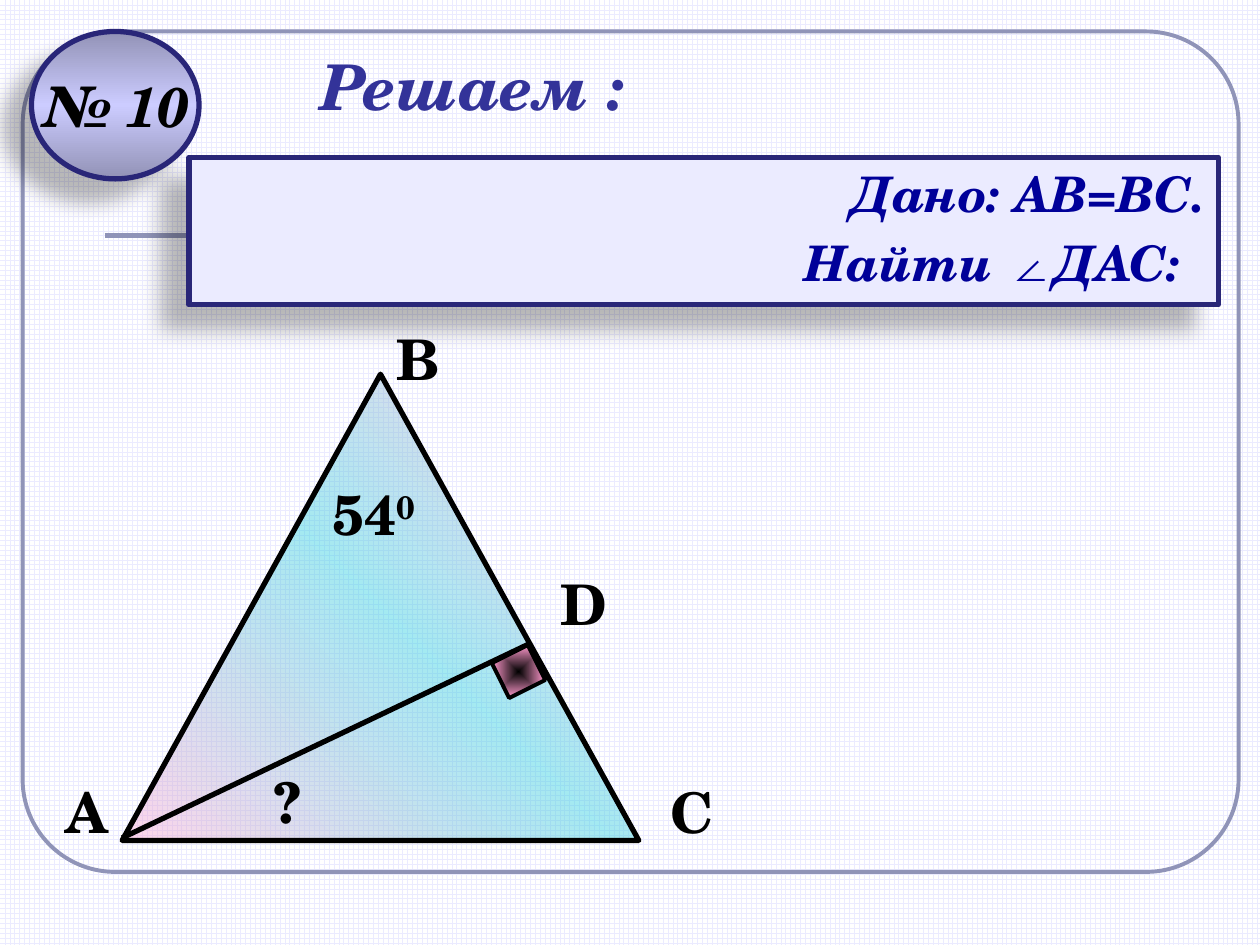
"""Build a geometry task slide with a triangle and its altitude."""
from pptx import Presentation, oxml, util as u
from pptx.dml import color
from pptx.enum import dml as looks, shapes, text
from pptx.oxml import ns

FONT = "TeX Gyre Schola"
INK, EDGE, PALE, RIM = "000000", "292678", "EBEBFF", "9094B8"
KIND, ALIGN = shapes.MSO_SHAPE, text.PP_ALIGN


def rgb(code):
    return color.RGBColor.from_string(code)


class Board:
    def __init__(self, slide):
        self.slide = slide

    def back(self, fore, base):
        fill = self.slide.background.fill
        fill.patterned()
        fill.pattern = looks.MSO_PATTERN.LARGE_GRID
        fill.fore_color.rgb, fill.back_color.rgb = rgb(fore), rgb(base)

    def stroke(self, item, code, width):
        item.line.color.rgb = rgb(code)
        item.line.width = u.Pt(width)

    def shape(self, kind, box, line, width, fill=None):
        item = self.slide.shapes.add_shape(kind, *map(u.Inches, box))
        item.shadow.inherit = False
        self.stroke(item, line, width)
        if fill:
            item.fill.solid()
            item.fill.fore_color.rgb = rgb(fill)
        else:
            item.fill.background()
        return item

    def blend(self, item, stops, angle=None):
        marks = "".join(
            f'<a:gs pos="{pos * 1000}"><a:srgbClr val="{code}">'
            f'<a:alpha val="{alpha * 1000}"/></a:srgbClr></a:gs>'
            for pos, code, alpha in stops)
        if angle is None:
            way = ('<a:path path="rect"><a:fillToRect l="50000" t="50000" '
                   'r="50000" b="50000"/></a:path>')
        else:
            way = f'<a:lin ang="{angle * 60000}" scaled="0"/>'
        new = oxml.parse_xml(
            f'<a:gradFill {ns.nsdecls("a")} rotWithShape="1">'
            f'<a:gsLst>{marks}</a:gsLst>{way}</a:gradFill>')
        item.fill.gradient()
        old = item._element.spPr.find(ns.qn("a:gradFill"))
        old.getparent().replace(old, new)

    def shade(self, item):
        item._element.spPr.find(ns.qn("a:effectLst")).append(oxml.parse_xml(
            f'<a:outerShdw {ns.nsdecls("a")} blurRad="{u.Pt(11.8)}" '
            f'dist="{u.Pt(19.7)}" dir="{141 * 60000}" algn="ctr" '
            'rotWithShape="0"><a:srgbClr val="000000">'
            '<a:alpha val="28000"/></a:srgbClr></a:outerShdw>'))

    def line(self, start, end, code, width):
        item = self.slide.shapes.add_connector(
            shapes.MSO_CONNECTOR.STRAIGHT, *map(u.Inches, start + end))
        self.stroke(item, code, width)
        item._element.spPr.append(
            oxml.parse_xml(f'<a:effectLst {ns.nsdecls("a")}/>'))

    def style(self, run, size, code, slant=False):
        font = run.font
        font.name, font.size = FONT, u.Pt(size)
        font.bold, font.italic = True, slant
        font.color.rgb = rgb(code)

    def words(self, item, words, size, code, align, slant=True, wrap=False):
        frame = item.text_frame
        frame.text = words
        frame.word_wrap = wrap
        for para in frame.paragraphs:
            para.alignment = align
            for run in para.runs:
                self.style(run, size, code, slant)
        return frame

    def label(self, box, words, size=32, code=INK, align=ALIGN.LEFT,
              slant=False, wrap=False):
        item = self.slide.shapes.add_textbox(*map(u.Inches, box))
        return self.words(item, words, size, code, align, slant, wrap)


def main():
    deck = Presentation()
    deck.slide_width, deck.slide_height = u.Inches(10), u.Inches(7.5)
    board = Board(deck.slides.add_slide(deck.slide_layouts[6]))
    board.back(PALE, "FFFFFF")

    frame = board.shape(KIND.ROUNDED_RECTANGLE, (0.18, 0.25, 9.65, 6.67), RIM, 2.25)
    frame.adjustments[0] = 0.11
    board.line((0.83, 1.87), (9.25, 1.87), RIM, 3)

    body = board.shape(KIND.ISOSCELES_TRIANGLE, (0.97, 2.97, 4.1, 3.7), INK, 3)
    board.blend(body, [(0, "FF99CC", 40), (50, "27CCDD", 41), (100, "FF99CC", 40)], 315)
    board.line((0.97, 6.65), (4.2, 5.11), INK, 3)
    right = board.shape(KIND.RECTANGLE, (3.96, 5.17, 0.31, 0.32), INK, 2.25)
    right.rotation = 63.5
    board.blend(right, [(0, INK, 100), (100, "FF99CC", 100)])

    for name, left, top in (("В", 3.05, 2.53), ("А", 0.42, 6.12),
                            ("С", 5.22, 6.12), ("D", 4.35, 4.47)):
        board.label((left, top, 0.54, 0.63), name)
    angle = board.label((2.54, 3.76, 1.34, 0.63), "54", wrap=True)
    power = angle.paragraphs[0].add_run()
    power.text = "0"
    board.style(power, 32, INK)
    power.font._element.set("baseline", "30000")
    board.label((2.07, 6.04, 0.47, 0.63), "?", wrap=True)

    task = board.shape(KIND.RECTANGLE, (1.5, 1.25, 8.17, 1.17), EDGE, 3, PALE)
    board.shade(task)
    given = board.words(task, "Дано: АВ=ВС.\nНайти ∠ДАС:", 28, "000099",
                        ALIGN.RIGHT, wrap=True)
    given.vertical_anchor = text.MSO_ANCHOR.TOP
    for para in given.paragraphs:
        para.space_before = u.Pt(5.6)
    given.paragraphs[1]._p.get_or_add_pPr().set("marR", str(u.Inches(0.2)))

    badge = board.shape(KIND.OVAL, (0.25, 0.25, 1.33, 1.17), EDGE, 3)
    board.blend(badge, [(0, "9292B6", 100), (50, "CCCCFF", 100), (100, "9292B6", 100)], 90)
    board.shade(badge)
    board.words(badge, "№ 10", 32, INK, ALIGN.CENTER)
    board.label((1.92, 0.33, 3.67, 0.67), "Решаем :", 36, "333399",
                ALIGN.CENTER, slant=True)
    deck.save("out.pptx")


if __name__ == "__main__":
    main()
